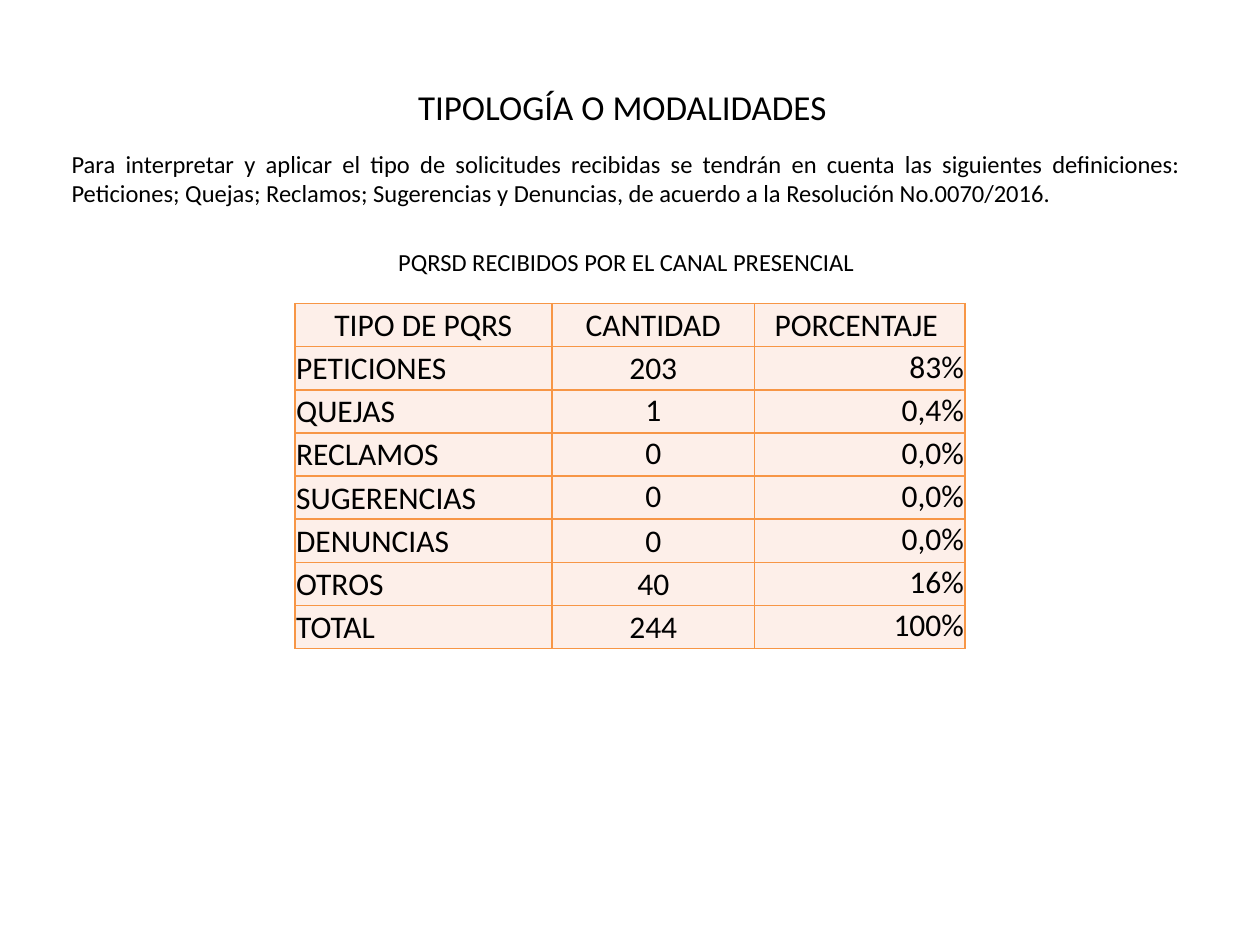
from dataclasses import dataclass

from lxml import etree
from pptx import Presentation
from pptx.dml.color import RGBColor
from pptx.enum.text import MSO_ANCHOR, PP_ALIGN
from pptx.oxml.ns import qn
from pptx.util import Inches, Pt

LEFT, CENTER, RIGHT, JUSTIFY = (
    PP_ALIGN.LEFT, PP_ALIGN.CENTER, PP_ALIGN.RIGHT, PP_ALIGN.JUSTIFY)
TOP, MIDDLE = MSO_ANCHOR.TOP, MSO_ANCHOR.MIDDLE

INTRO = ("Para interpretar y aplicar el tipo de solicitudes recibidas se tendrán en "
         "cuenta las siguientes definiciones: Peticiones; Quejas; Reclamos; "
         "Sugerencias y Denuncias, de acuerdo a la Resolución No.0070/2016.")
CAPTION = "PQRSD RECIBIDOS POR EL CANAL PRESENCIAL"
HEADER = ("TIPO DE PQRS", "CANTIDAD", "PORCENTAJE ")
REQUESTS = [
    ("PETICIONES", "203", "83%"),
    ("QUEJAS", "1", "0,4%"),
    ("RECLAMOS", "0", "0,0%"),
    ("SUGERENCIAS", "0", "0,0%"),
    ("DENUNCIAS", "0", "0,0%"),
    ("OTROS", "40", "16%"),
    ("TOTAL", "244", "100%"),
]
TOP_COUNTS = {"QUEJAS", "RECLAMOS", "SUGERENCIAS"}


@dataclass(frozen=True)
class Theme:
    font: str = "Calibri"
    text: str = "000000"
    cell: str = "FDEFE9"
    border: str = "F79646"
    border_pt: float = 1
    title_size: int = 20
    body_size: int = 14
    table_size: int = 18


class SlideBuilder:
    def __init__(self, slide, theme):
        self.slide, self.theme = slide, theme

    def paragraph(self, p, text, size, align, before=0):
        p.alignment = align
        p.space_before = Pt(before)
        r = p.add_run()
        r.text = text
        for name, value in {"name": self.theme.font, "size": Pt(size)}.items():
            setattr(r.font, name, value)
        r.font.color.rgb = RGBColor.from_string(self.theme.text)

    def text(self, box, paragraphs, size, anchor=TOP):
        """Add a text box; each paragraph is (text, alignment, space before)."""
        tf = self.slide.shapes.add_textbox(*map(Inches, box)).text_frame
        tf.word_wrap = True
        tf.vertical_anchor = anchor
        for i, (text, align, before) in enumerate(paragraphs):
            p = tf.add_paragraph() if i else tf.paragraphs[0]
            self.paragraph(p, text, size, align, before)

    def borders(self, cell):
        tc_pr = cell._tc.get_or_add_tcPr()
        for i, side in enumerate(("a:lnL", "a:lnR", "a:lnT", "a:lnB")):
            ln = etree.Element(qn(side), w=str(Pt(self.theme.border_pt)))
            fill = etree.SubElement(ln, qn("a:solidFill"))
            etree.SubElement(fill, qn("a:srgbClr"), val=self.theme.border)
            tc_pr.insert(i, ln)

    def cell(self, cell, text, align, anchor):
        margin = Inches(0.01)
        layout = {"margin_left": margin, "margin_right": margin, "margin_top": margin,
                  "margin_bottom": 0, "vertical_anchor": anchor}
        for name, value in layout.items():
            setattr(cell, name, value)
        cell.fill.solid()
        cell.fill.fore_color.rgb = RGBColor.from_string(self.theme.cell)
        self.borders(cell)
        self.paragraph(cell.text_frame.paragraphs[0], text, self.theme.table_size, align)

    def table(self, box, widths, header, rows):
        table = self.slide.shapes.add_table(
            len(rows) + 1, len(header), *map(Inches, box)).table
        for column, width in zip(table.columns, widths):
            column.width = Inches(width)
        for c, text in enumerate(header):
            self.cell(table.cell(0, c), text, CENTER, MIDDLE)
        for r, row in enumerate(rows, 1):
            count_anchor = TOP if row[0] in TOP_COUNTS else MIDDLE
            formats = ((LEFT, MIDDLE), (CENTER, count_anchor), (RIGHT, TOP))
            for c, (text, (align, anchor)) in enumerate(zip(row, formats)):
                self.cell(table.cell(r, c), text, align, anchor)


def main():
    prs = Presentation()
    prs.slide_width, prs.slide_height = Inches(10), Inches(7.5)
    theme = Theme()
    s = SlideBuilder(prs.slides.add_slide(prs.slide_layouts[6]), theme)
    s.text((0.44, 0.48, 9, 0.73), [("TIPOLOGÍA O MODALIDADES", CENTER, 0)],
           theme.title_size, MIDDLE)
    s.text((0.47, 1.13, 9, 4.9), [(INTRO, JUSTIFY, 0), (CAPTION, CENTER, 22.5)],
           theme.body_size)
    s.table((2.34, 2.41, 5.32, 2.74), (2.04, 1.61, 1.67), HEADER, REQUESTS)
    prs.save("out.pptx")


if __name__ == "__main__":
    main()
